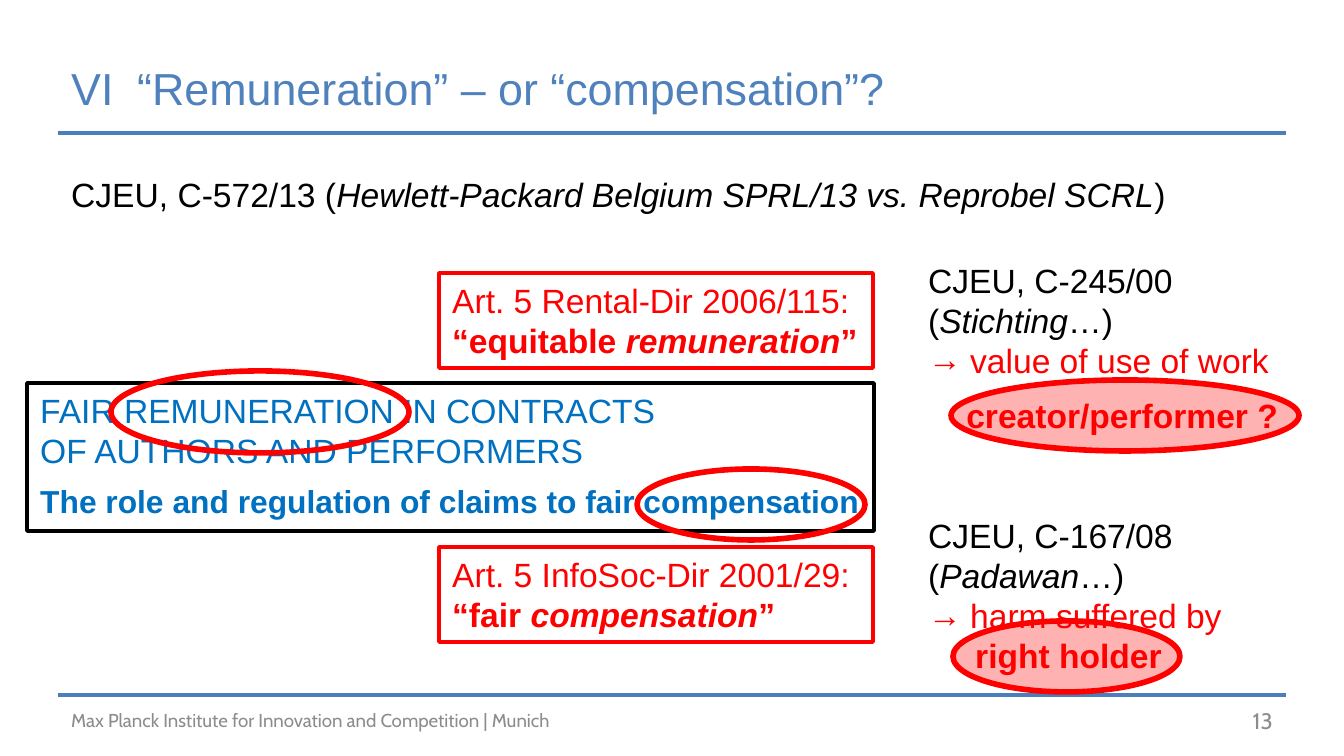
from lxml import etree
from pptx import Presentation
from pptx.dml.color import RGBColor
from pptx.enum.shapes import MSO_CONNECTOR, MSO_SHAPE
from pptx.enum.text import MSO_ANCHOR, PP_ALIGN
from pptx.oxml.ns import qn
from pptx.util import Pt

PX = 914400 / 134.4  # EMU in one pixel
COLORS = {
    "rule": "4B7EBC", "title": "4F81BD", "heading": "0070C0", "red": "FF0000",
    "black": "000000", "white": "FFFFFF", "footer": "8C8C8C",
}


def px(*lengths):
    return [round(length * PX) for length in lengths]


def write(shape, lines, color, size=18, font="Arial", anchor=MSO_ANCHOR.TOP):
    """Fill a shape; a line is a list of (text, style) runs, style using b and i."""
    frame = shape.text_frame
    frame.word_wrap = True
    frame.vertical_anchor = anchor
    for index, runs in enumerate(lines):
        paragraph = frame.paragraphs[0] if index == 0 else frame.add_paragraph()
        paragraph.alignment = PP_ALIGN.LEFT
        paragraph.font.name = font
        paragraph.font.size = Pt(size)
        paragraph.font.color.rgb = RGBColor.from_string(COLORS[color])
        paragraph.font.bold = all("b" in style for _, style in runs)
        for text, style in runs:
            run = paragraph.add_run()
            run.text = text
            if "i" in style:
                run.font.italic = True
    return frame.paragraphs


presentation = Presentation()
presentation.slide_width, presentation.slide_height = px(1344, 756)
slide = presentation.slides.add_slide(presentation.slide_layouts[6])
shapes = slide.shapes

# Rules above and below the content
for y in (133, 695):
    rule = shapes.add_connector(MSO_CONNECTOR.STRAIGHT, *px(58, y, 1286, y))
    rule.line.color.rgb = RGBColor.from_string(COLORS["rule"])
    rule.line.width = Pt(2)
    etree.SubElement(rule._element.spPr, qn("a:effectLst"))

# Title with a tab after the number
title = shapes.add_textbox(*px(58, 50, 964, 75))
paragraph = title.text_frame.paragraphs[0]
tabs = etree.SubElement(paragraph._p.get_or_add_pPr(), qn("a:tabLst"))
etree.SubElement(tabs, qn("a:tab"), pos=str(px(66)[0]), algn="l")
write(title, [[("VI\t“Remuneration” – or “compensation”?", "")]], "title", 24,
      anchor=MSO_ANCHOR.MIDDLE)

# Case heading
write(shapes.add_textbox(*px(58, 167, 1196, 52)),
      [[("CJEU, C-572/13 (", ""),
        ("Hewlett-Packard Belgium SPRL/13 vs. Reprobel SCRL", "i"), (")", "")]], "black")

# Framed boxes: black topic box between two red directive boxes
boxes = [
    ((27, 383, 847, 148), "black", "heading",
     [[("FAIR REMUNERATION IN CONTRACTS", "")], [("OF AUTHORS AND PERFORMERS", "")],
      [("The role and regulation of claims to fair compensation", "b")]]),
    ((439, 273, 434, 95), "red", "red",
     [[("Art. 5 Rental-Dir 2006/115:", "")],
      [("“equitable ", "b"), ("remuneration", "bi"), ("”", "b")]]),
    ((439, 547, 434, 95), "red", "red",
     [[("Art. 5 InfoSoc-Dir 2001/29:", "")],
      [("“fair ", "b"), ("compensation", "bi"), ("”", "b")]]),
]
for bounds, line_color, text_color, lines in boxes:
    box = shapes.add_shape(MSO_SHAPE.RECTANGLE, *px(*bounds))
    box.shadow.inherit = False
    box.fill.solid()
    box.fill.fore_color.rgb = RGBColor.from_string(COLORS["white"])
    box.line.color.rgb = RGBColor.from_string(COLORS[line_color])
    box.line.width = Pt(2)
    paragraphs = write(box, lines, text_color)
    if len(lines) == 3:
        paragraphs[1].space_after = Pt(6)
        paragraphs[2].font.size = Pt(17)

# Red ellipses: two open on the topic box, two tinted behind the right column
ellipses = [((111, 371, 298, 82), False), ((637, 469, 228, 71), False),
            ((951, 380, 348, 71), True), ((953, 621, 227, 71), True)]
for bounds, tinted in ellipses:
    ellipse = shapes.add_shape(MSO_SHAPE.OVAL, *px(*bounds))
    ellipse.shadow.inherit = False
    ellipse.line.color.rgb = RGBColor.from_string(COLORS["red"])
    ellipse.line.width = Pt(3)
    if tinted:
        ellipse.fill.solid()
        ellipse.fill.fore_color.rgb = RGBColor.from_string(COLORS["red"])
        fill_color = ellipse._element.spPr.find(qn("a:solidFill"))[0]
        etree.SubElement(fill_color, qn("a:alpha"), val="30000")
    else:
        ellipse.fill.background()

# Right column: case, arrow bullet with its meaning
cases = [(253, 136, "CJEU, C-245/00", "Stichting", "value of use of work"),
         (508, 136, "CJEU, C-167/08", "Padawan", "harm suffered by")]
for top, height, number, party, meaning in cases:
    column = shapes.add_textbox(*px(915, top, 420, height))
    paragraphs = write(column, [[(number, "")], [("(", ""), (party, "i"), ("…)", "")]], "black")
    paragraph = column.text_frame.add_paragraph()
    properties = paragraph._p.get_or_add_pPr()
    indent = px(42)[0]
    properties.set("marL", str(indent))
    properties.set("indent", str(-indent))
    etree.SubElement(properties, qn("a:buFont"), typeface="Arial")
    etree.SubElement(properties, qn("a:buChar"), char="→")
    paragraph.text = meaning
    paragraph.font.name = "Arial"
    paragraph.font.size = Pt(18)
    paragraph.font.color.rgb = RGBColor.from_string(COLORS["red"])

# Labels on the tinted ellipses
for left, top, width, label in ((953, 388, 366, "creator/performer ?"),
                                (962, 628, 260, "right holder")):
    write(shapes.add_textbox(*px(left, top, width, 54)), [[(label, "b")]], "red")

# Footer and page number
write(shapes.add_textbox(*px(58, 700, 1142, 41)),
      [[("Max Planck Institute for Innovation and Competition | Munich", "")]],
      "footer", 10, "Cabin", MSO_ANCHOR.MIDDLE)
number = write(shapes.add_textbox(*px(1212, 700, 74, 41)), [[("13", "")]],
               "footer", 12, "Cabin", MSO_ANCHOR.MIDDLE)
number[0].alignment = PP_ALIGN.RIGHT

presentation.save("out.pptx")
